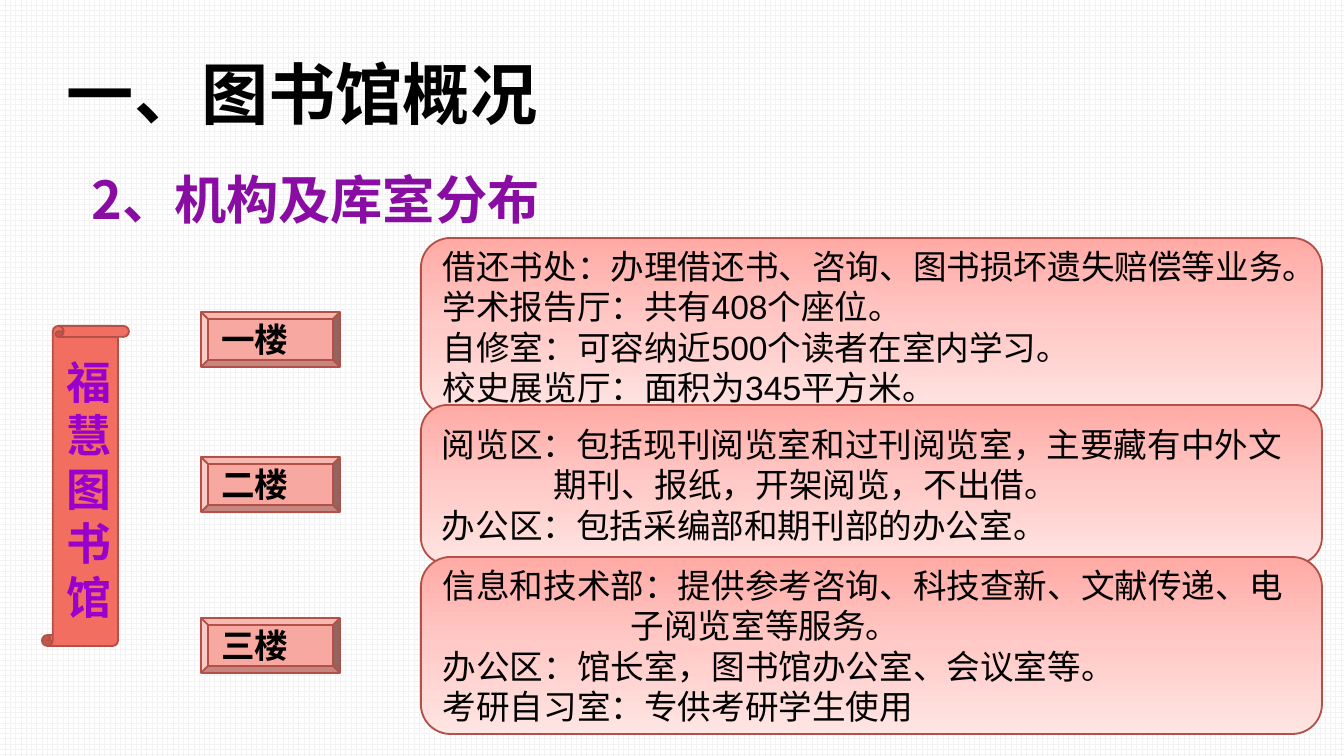
import copy

import pptx
import pptx.dml.color
import pptx.enum.dml
import pptx.enum.shapes
import pptx.enum.text
import pptx.oxml
import pptx.oxml.ns
import pptx.util

PX = 914400 / 134.4
CJK = "Noto Sans CJK SC"
OUTLINE = "B35148"
GRADIENT = [(0, "FFAAA5"), (0.5, "FFCAC7"), (1, "FFE5E3")]
SHAPES = pptx.enum.shapes.MSO_SHAPE
ANCHOR = pptx.enum.text.MSO_ANCHOR

FLOORS = [
    ("一楼", 312, (421, 238, 901, 177), [
        ("借还书处：办理借还书、咨询、图书损坏遗失赔偿等业务。", 0),
        ("学术报告厅：共有408个座位。", 0),
        ("自修室：可容纳近500个读者在室内学习。", 0),
        ("校史展览厅：面积为345平方米。", 0),
    ]),
    ("二楼", 457, (421, 405, 901, 159), [
        ("阅览区：包括现刊阅览室和过刊阅览室，主要藏有中外文", 0),
        ("期刊、报纸，开架阅览，不出借。", 112),
        ("办公区：包括采编部和期刊部的办公室。", 0),
    ]),
    ("三楼", 618, (421, 557, 901, 177), [
        ("信息和技术部：提供参考咨询、科技查新、文献传递、电", 0),
        ("子阅览室等服务。", 188),
        ("办公区：馆长室，图书馆办公室、会议室等。", 0),
        ("考研自习室：专供考研学生使用", 0),
    ]),
]


def emu(px):
    """Turn px into EMU."""
    return pptx.util.Emu(round(px * PX))


def rgb(value):
    """Turn a hex string into a colour."""
    return pptx.dml.color.RGBColor.from_string(value)


def write(sp, lines, size, color, font=CJK, bold=False, anchor=ANCHOR.MIDDLE):
    """Fill a shape with left-aligned lines, each given as text and indent."""
    tf = sp.text_frame
    tf.word_wrap = True
    tf.vertical_anchor = anchor
    for i, (text, indent) in enumerate(lines):
        p = tf.add_paragraph() if i else tf.paragraphs[0]
        p.alignment = pptx.enum.text.PP_ALIGN.LEFT
        if indent:
            p._p.get_or_add_pPr().set("marL", str(emu(indent)))
        r = p.add_run()
        r.text = text
        r.font.name = font
        r.font.size = pptx.util.Pt(size)
        r.font.bold = bold
        r.font.color.rgb = rgb(color)
        ea = pptx.oxml.parse_xml(
            f'<a:ea {pptx.oxml.ns.nsdecls("a")} typeface="{CJK}"/>')
        r.font._element.find(pptx.oxml.ns.qn("a:latin")).addnext(ea)


def add_outlined(s, kind, box, fill=None):
    """Add a preset shape with the thin red outline."""
    sp = s.shapes.add_shape(kind, *map(emu, box))
    sp.shadow.inherit = False
    sp.line.color.rgb = rgb(OUTLINE)
    sp.line.width = pptx.util.Pt(1)
    if fill:
        sp.fill.solid()
        sp.fill.fore_color.rgb = rgb(fill)
    return sp


def add_headings(s, title_box, subtitle_box):
    """Place the title and the section heading."""
    title = s.shapes.title
    title.left, title.top, title.width, title.height = map(emu, title_box)
    tf = title.text_frame
    tf.margin_left = tf.margin_right = emu(9)
    tf.margin_top = tf.margin_bottom = emu(5)
    write(title, [("一、图书馆概况", 0)], 36, "000000", bold=True)
    tf.paragraphs[0].line_spacing = 0.9
    subtitle = s.shapes.add_textbox(*map(emu, subtitle_box))
    write(subtitle, [("2、机构及库室分布", 0)], 28, "8A0DA3", bold=True,
          anchor=ANCHOR.TOP)


def add_scroll(s, box):
    """Place the scroll that names the library, one character a line."""
    sp = add_outlined(s, SHAPES.VERTICAL_SCROLL, box, "F26E61")
    write(sp, [(char, 0) for char in "福慧图书馆"], 24, "9900CC", "Arial", True)


def add_floor_label(s, box, name):
    """Place the bevelled label of a floor."""
    sp = add_outlined(s, SHAPES.BEVEL, box, "F7A8A0")
    write(sp, [(name, 0)], 18, "000000", bold=True)


def add_floor_card(s, box, lines):
    """Place the gradient card that lists the rooms of a floor."""
    sp = add_outlined(s, SHAPES.ROUNDED_RECTANGLE, box)
    sp.fill.gradient()
    sp.fill.gradient_angle = 270
    stops = sp._element.spPr.find(".//" + pptx.oxml.ns.qn("a:gsLst"))
    stops.insert(1, copy.deepcopy(stops[0]))
    for stop, (position, color) in zip(sp.fill.gradient_stops, GRADIENT):
        stop.position = position
        stop.color.rgb = rgb(color)
    write(sp, lines, 18, "000000", "Arial")


def main():
    """Build the slide and save it."""
    prs = pptx.Presentation()
    prs.slide_width, prs.slide_height = emu(1344), emu(756)
    s = prs.slides.add_slide(prs.slide_layouts[5])
    fill = s.background.fill
    fill.patterned()
    fill.pattern = pptx.enum.dml.MSO_PATTERN.CROSS
    fill.fore_color.rgb = rgb("F2F2F2")
    fill.back_color.rgb = rgb("FFFFFF")
    add_headings(s, (58, 50, 1210, 95), (78, 161, 573, 77))
    add_scroll(s, (42, 326, 87, 320))
    for name, top, card_box, lines in FLOORS:
        add_floor_label(s, (201, top, 139, 55), name)
        add_floor_card(s, card_box, lines)
    prs.save("out.pptx")


if __name__ == "__main__":
    main()
